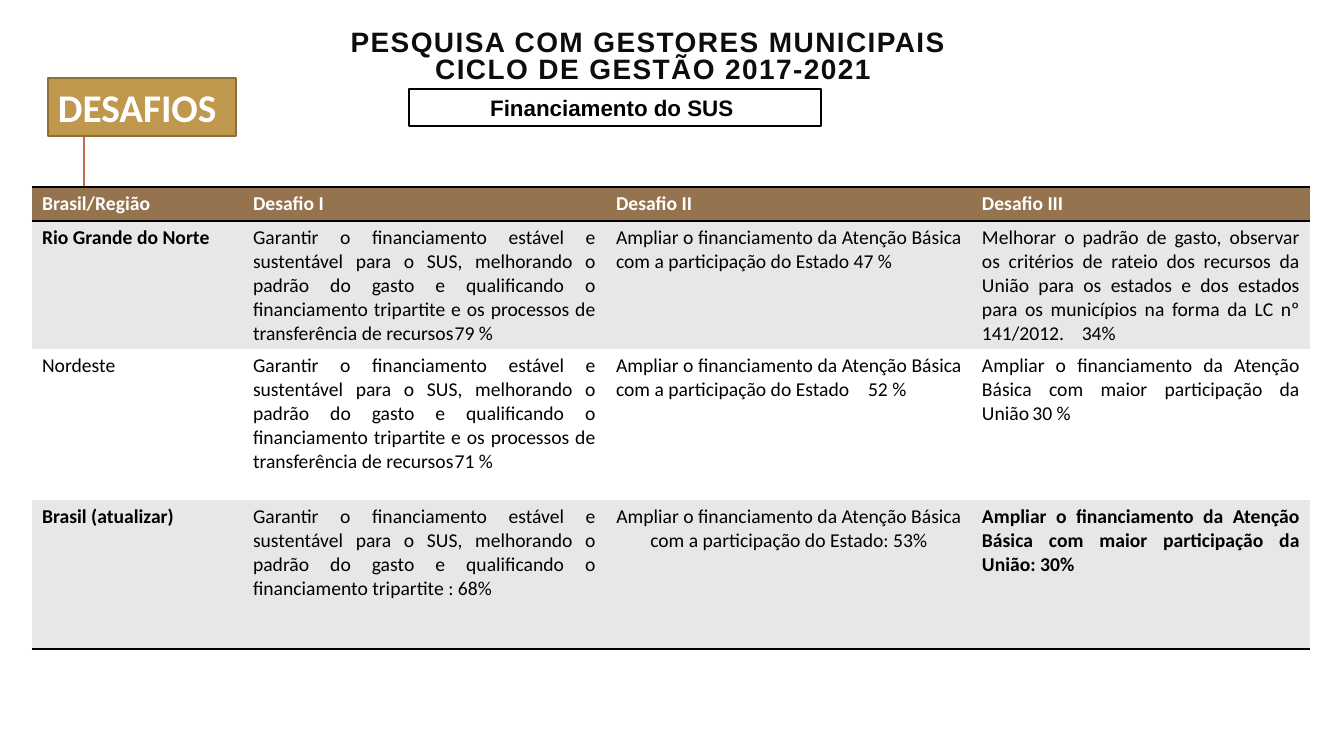
import lxml.etree
import pptx
import pptx.dml.color
import pptx.enum.shapes
import pptx.enum.text
import pptx.oxml
import pptx.oxml.ns
import pptx.util

PX = 12192000 / 1344
ALIGN = pptx.enum.text.PP_ALIGN
ANCHOR = pptx.enum.text.MSO_ANCHOR
NO_STYLE = "{2D5ABB26-0587-4C30-8999-92F81FD0307C}"
theme = {
    "black": "000000", "white": "FFFFFF", "title": "0D0D0D",
    "gold": "BF974D", "gold_line": "8D7039", "rust": "C66951",
    "header": "94734E", "band": "E7E7E7",
    "heading_font": "Arial", "body_font": "Calibri",
    "title_size": 20, "topic_size": 16, "tag_size": 28, "table_size": 14,
}


def px(*lengths):
    return [pptx.util.Emu(round(n * PX)) for n in lengths]


def write(tf, text, font, size, color, bold, align):
    tf.word_wrap = True
    p = tf.paragraphs[0]
    p.text = text
    p.alignment = align
    p.font.name = theme[font]
    p.font.size = pptx.util.Pt(theme[size])
    p.font.bold = bold
    p.font.color.rgb = pptx.dml.color.RGBColor.from_string(theme[color])
    return p


prs = pptx.Presentation()
prs.slide_width, prs.slide_height = px(1344, 756)
s = prs.slides.add_slide(prs.slide_layouts[6])

stem = s.shapes.add_connector(pptx.enum.shapes.MSO_CONNECTOR.STRAIGHT, *px(84, 192, 84, 91))
stem.line.color.rgb = pptx.dml.color.RGBColor.from_string(theme["rust"])
stem.line.width = pptx.util.Pt(1.5)
lxml.etree.SubElement(stem._element.spPr, pptx.oxml.ns.qn("a:effectLst"))

title = s.shapes.add_textbox(*px(117, -10, 1072, 136))
title.text_frame.vertical_anchor = ANCHOR.MIDDLE
p = write(title.text_frame, "PESQUISA COM GESTORES MUNICIPAIS \vCICLO DE GESTÃO 2017-2021",
          "heading_font", "title_size", "title", True, ALIGN.CENTER)
p.line_spacing = 0.8
for r in p.runs:
    r._r.get_or_add_rPr().set("spc", "100")

boxes = [
    ((409, 89, 412, 37), "white", "black", "Financiamento do SUS ",
     "heading_font", "topic_size", "black", ALIGN.CENTER),
    ((48, 78, 188, 58), "gold", "gold_line", "DESAFIOS",
     "body_font", "tag_size", "white", ALIGN.LEFT),
]
for place, fill, line, text, font, size, color, align in boxes:
    sp = s.shapes.add_shape(pptx.enum.shapes.MSO_SHAPE.RECTANGLE, *px(*place))
    sp.shadow.inherit = False
    sp.fill.solid()
    sp.fill.fore_color.rgb = pptx.dml.color.RGBColor.from_string(theme[fill])
    sp.line.color.rgb = pptx.dml.color.RGBColor.from_string(theme[line])
    sp.line.width = pptx.util.Pt(1.25)
    sp.text_frame.vertical_anchor = ANCHOR.MIDDLE
    write(sp.text_frame, text, font, size, color, True, align)

tripartite = ("Garantir o financiamento estável e sustentável para o SUS, melhorando o padrão "
              "do gasto e qualificando o financiamento tripartite ")
transfer = tripartite + "e os processos de transferência de recursos\t"
basic_care = "Ampliar o financiamento da Atenção Básica com "
state = basic_care + "a participação do Estado"
union = basic_care + "maior participação da União"
rows = [
    ["Brasil/Região ", "Desafio I", "Desafio II", "Desafio III"],
    ["Rio Grande do Norte", transfer + "79 %", state + " 47 %",
     "Melhorar o padrão de gasto, observar os critérios de rateio dos recursos da União para os "
     "estados e dos estados para os municípios na forma da LC nº 141/2012.    34%"],
    ["Nordeste", transfer + "71 %", state + "\t52 %", union + "\t30 %"],
    ["Brasil (atualizar)", tripartite + ": 68%", state + ": 53%", union + ": 30%"],
]
fills = ["header", "band", "white", "band"]
rules = [["lnT", "lnB"], [], [], ["lnB"]]
bold_cells = {(0, 0), (0, 1), (0, 2), (0, 3), (1, 0), (3, 0), (3, 3)}
col_widths = px(211, 363, 366, 338)
row_heights = px(34, 128, 151, 149)

frame = s.shapes.add_table(4, 4, *px(32, 187, 1278, 462))
table = frame.table
table._tbl.tblPr[0].text = NO_STYLE
for col, width in zip(table.columns, col_widths):
    col.width = width
for i, texts in enumerate(rows):
    table.rows[i].height = row_heights[i]
    for j, text in enumerate(texts):
        cell = table.cell(i, j)
        cell.fill.solid()
        cell.fill.fore_color.rgb = pptx.dml.color.RGBColor.from_string(theme[fills[i]])
        write(cell.text_frame, text, "body_font", "table_size", "black" if i else "white",
              (i, j) in bold_cells, ALIGN.CENTER if (i, j) == (3, 2) else ALIGN.JUSTIFY)
        for k, side in enumerate(rules[i]):
            cell._tc.get_or_add_tcPr().insert(k, pptx.oxml.parse_xml(
                f'<a:{side} {pptx.oxml.ns.nsdecls("a")} w="25400"><a:solidFill>'
                f'<a:srgbClr val="{theme["black"]}"/></a:solidFill></a:{side}>'))

prs.save("out.pptx")
